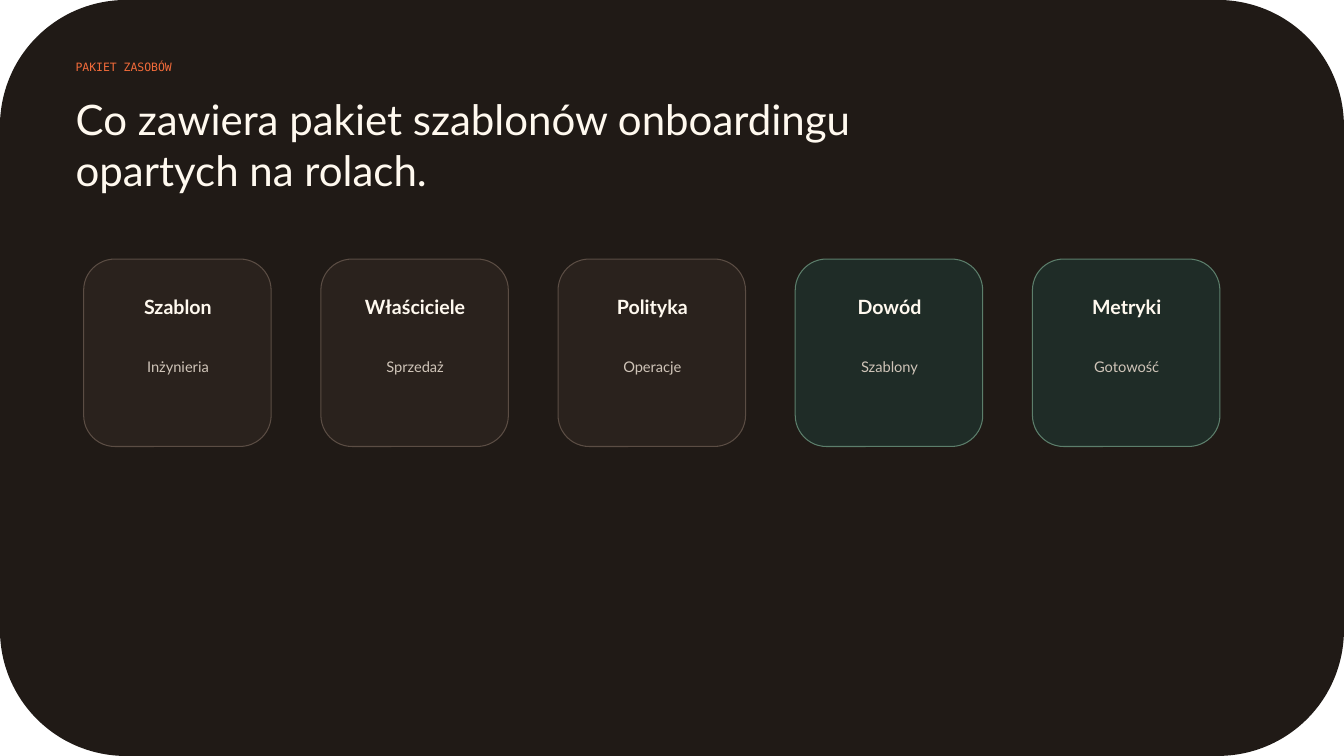
"""Build the slide listing the contents of the onboarding template pack."""
from pptx import Presentation
from pptx.dml.color import RGBColor as RGB
from pptx.enum.shapes import MSO_SHAPE as Shape
from pptx.enum.text import MSO_ANCHOR as Anchor, PP_ALIGN as Align
from pptx.util import Inches, Pt

COLORS = {
    "ink": "201A16", "cream": "FFF9EF", "sand": "CFC4B8", "orange": "F26B3A",
    "brown": "2A221D", "taupe": "5B4D44", "green": "1F2C27", "sage": "5C7E6B",
}
CARDS = [
    ("Szablon", "Inżynieria", "brown", "taupe"),
    ("Właściciele", "Sprzedaż", "brown", "taupe"),
    ("Polityka", "Operacje", "brown", "taupe"),
    ("Dowód", "Szablony", "green", "sage"),
    ("Metryki", "Gotowość", "green", "sage"),
]
LEFT, TOP, SIDE, STEP = 0.83, 2.57, 1.86, 2.3525

prs = Presentation()
prs.slide_width, prs.slide_height = Inches(13.33), Inches(7.5)
slide = prs.slides.add_slide(prs.slide_layouts[6])


def add_panel(x, y, w, h, fill, edge=None):
    panel = slide.shapes.add_shape(
        Shape.ROUNDED_RECTANGLE, Inches(x), Inches(y), Inches(w), Inches(h))
    panel.shadow.inherit = False
    panel.fill.solid()
    panel.fill.fore_color.rgb = RGB.from_string(COLORS[fill])
    if edge:
        panel.line.color.rgb = RGB.from_string(COLORS[edge])
        panel.line.width = Pt(0.75)
    else:
        panel.line.fill.background()


def add_text(x, y, w, h, text, size, color, font="Lato", align=Align.LEFT, bold=False):
    box = slide.shapes.add_textbox(Inches(x), Inches(y), Inches(w), Inches(h))
    frame = box.text_frame
    frame.word_wrap = True
    frame.vertical_anchor = Anchor.TOP
    frame.margin_left = frame.margin_right = 0
    frame.margin_top = frame.margin_bottom = 0
    para = frame.paragraphs[0]
    para.alignment = align
    run = para.add_run()
    run.text = text
    run.font.name = font
    run.font.size = Pt(size)
    run.font.bold = bold
    run.font.color.rgb = RGB.from_string(COLORS[color])


add_panel(0, 0, 13.33, 7.5, "ink")
add_text(0.75, 0.6, 4.59, 0.28, "PAKIET ZASOBÓW", 8.2, "orange", "DejaVu Sans Mono")
add_text(0.75, 0.93, 8.31, 0.71,
         "Co zawiera pakiet szablonów onboardingu opartych na rolach.", 30, "cream")

for i, (title, role, fill, edge) in enumerate(CARDS):
    x = LEFT + i * STEP
    add_panel(x, TOP, SIDE, SIDE, fill, edge)
    add_text(x + 0.19, 2.93, 1.49, 0.33, title, 14, "cream", align=Align.CENTER, bold=True)
    add_text(x + 0.16, 3.55, 1.55, 0.57, role, 10.5, "sand", align=Align.CENTER)

prs.save("out.pptx")
